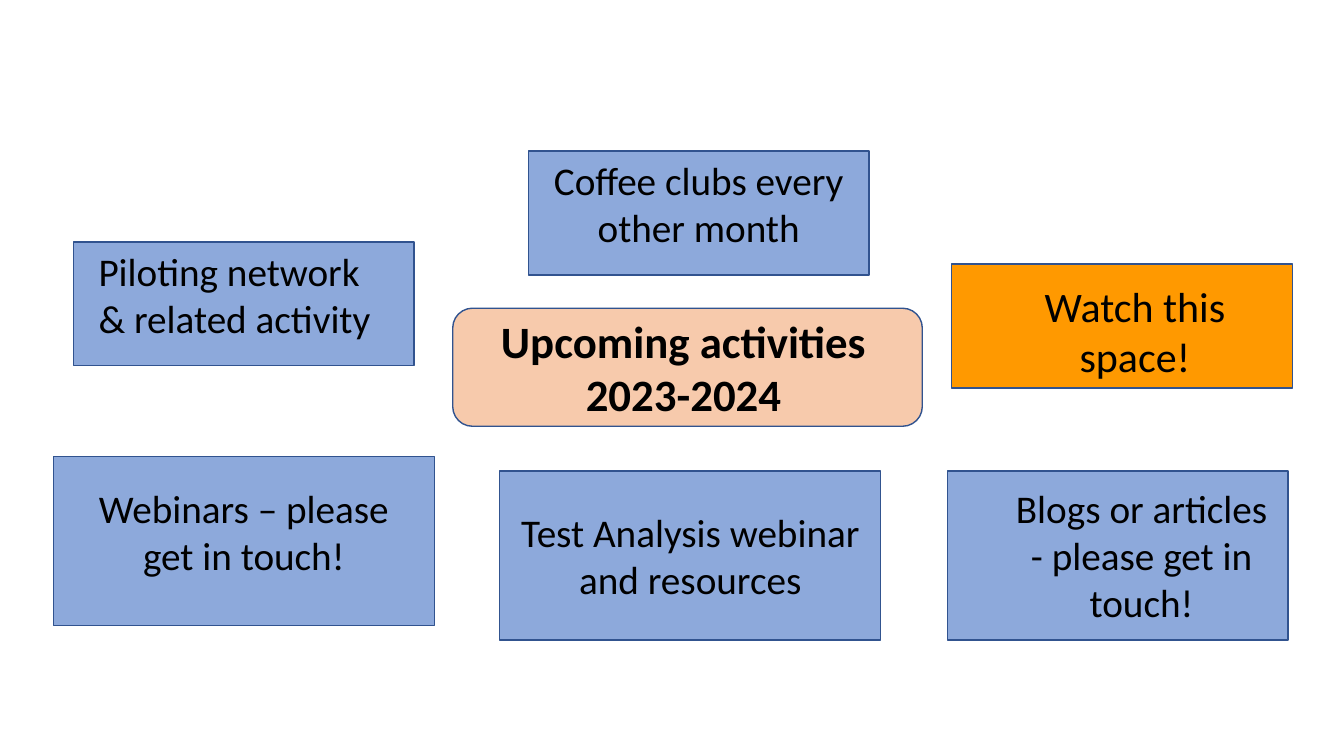
from dataclasses import dataclass
from typing import Optional

import pptx
import pptx.dml.color
import pptx.enum.shapes
import pptx.enum.text
import pptx.util

RGBColor = pptx.dml.color.RGBColor
Shape = pptx.enum.shapes.MSO_SHAPE
Align = pptx.enum.text.PP_ALIGN
Anchor = pptx.enum.text.MSO_ANCHOR
AutoSize = pptx.enum.text.MSO_AUTO_SIZE

BLACK = RGBColor(0x00, 0x00, 0x00)
BLUE = RGBColor(0x8D, 0xA9, 0xDB)
PEACH = RGBColor(0xF7, 0xCA, 0xAC)
ORANGE = RGBColor(0xFF, 0x99, 0x00)
OUTLINE = RGBColor(0x31, 0x53, 0x8F)

# The slide is a grid of 32 square columns by 18 rows
COLUMNS = 32
SLIDE_WIDTH = pptx.util.Inches(13.333)
SLIDE_HEIGHT = pptx.util.Inches(7.5)
CELL = SLIDE_WIDTH / COLUMNS

LOW, TALL = 2.95, 4.03
NARROW, WIDE = 8.11, 9.07


@dataclass(frozen=True)
class Area:
    column: float
    row: float
    columns: float
    rows: float

    def lengths(self) -> tuple[int, ...]:
        return tuple(round(n * CELL) for n in (self.column, self.row, self.columns, self.rows))


@dataclass(frozen=True)
class Activity:
    text: str
    card: Area
    label: Optional[Area] = None  # without a label area the card holds the text
    fill: RGBColor = BLUE
    size: int = 28
    align: Align = Align.CENTER


HEADING_CARD = Area(10.78, 7.34, 11.18, 2.81)
HEADING_LABEL = Area(11.09, 7.34, 10.37, 2.83)

ACTIVITIES = [
    Activity("Piloting network & related activity", Area(1.75, 5.76, NARROW, LOW),
             Area(2.11, 5.76, 7.42, 2.5), align=Align.LEFT),
    Activity("Coffee clubs every other month", Area(12.58, 3.6, NARROW, LOW),
             Area(12.82, 3.6, 7.63, 2.5)),
    Activity("Watch this space!", Area(22.66, 6.29, NARROW, LOW),
             Area(23.21, 6.55, 7.63, 2.66), fill=ORANGE, size=30),
    Activity("Webinars – please get in touch!", Area(1.27, 10.87, WIDE, TALL),
             Area(1.75, 11.42, NARROW, 2.5)),
    Activity("Test Analysis webinar and resources", Area(11.9, 11.21, WIDE, TALL)),
    Activity("Blogs or articles - please get in touch!", Area(22.56, 11.21, NARROW, TALL),
             Area(23.81, 11.42, 6.74, 3.65)),
]


def add_card(slide: pptx.slide.Slide, kind: Shape, area: Area, fill: RGBColor):
    card = slide.shapes.add_shape(kind, *area.lengths())
    card.shadow.inherit = False
    card.fill.solid()
    card.fill.fore_color.rgb = fill
    card.line.color.rgb = OUTLINE
    card.line.width = pptx.util.Pt(1)
    return card


def write(box, text: str, size: int, align: Align, anchor: Anchor = Anchor.TOP,
          auto_size: AutoSize = AutoSize.SHAPE_TO_FIT_TEXT, bold: bool = False) -> None:
    frame = box.text_frame
    frame.word_wrap = True
    frame.auto_size = auto_size
    frame.vertical_anchor = anchor
    para = frame.paragraphs[0]
    para.alignment = align
    span = para.add_run()
    span.text = text
    span.font.name = "Calibri"
    span.font.size = pptx.util.Pt(size)
    span.font.bold = bold
    span.font.color.rgb = BLACK


def add_heading(slide: pptx.slide.Slide) -> None:
    card = add_card(slide, Shape.ROUNDED_RECTANGLE, HEADING_CARD, PEACH)
    title = slide.shapes.title
    title.left, title.top, title.width, title.height = HEADING_LABEL.lengths()
    write(title, "Upcoming activities 2023-2024", 32, Align.CENTER, bold=True)
    card.element.addnext(title.element)  # bring the title in front of its card


def add_activity(slide: pptx.slide.Slide, activity: Activity) -> None:
    card = add_card(slide, Shape.RECTANGLE, activity.card, activity.fill)
    if activity.label is None:
        write(card, activity.text, activity.size, activity.align, Anchor.MIDDLE, AutoSize.NONE)
    else:
        label = slide.shapes.add_textbox(*activity.label.lengths())
        write(label, activity.text, activity.size, activity.align)


def main() -> None:
    deck = pptx.Presentation()
    deck.slide_width, deck.slide_height = SLIDE_WIDTH, SLIDE_HEIGHT
    page = deck.slides.add_slide(deck.slide_layouts.get_by_name("Title Only"))

    # Central heading with the activities around it
    add_heading(page)
    for activity in ACTIVITIES:
        add_activity(page, activity)

    deck.save("out.pptx")


if __name__ == "__main__":
    main()
